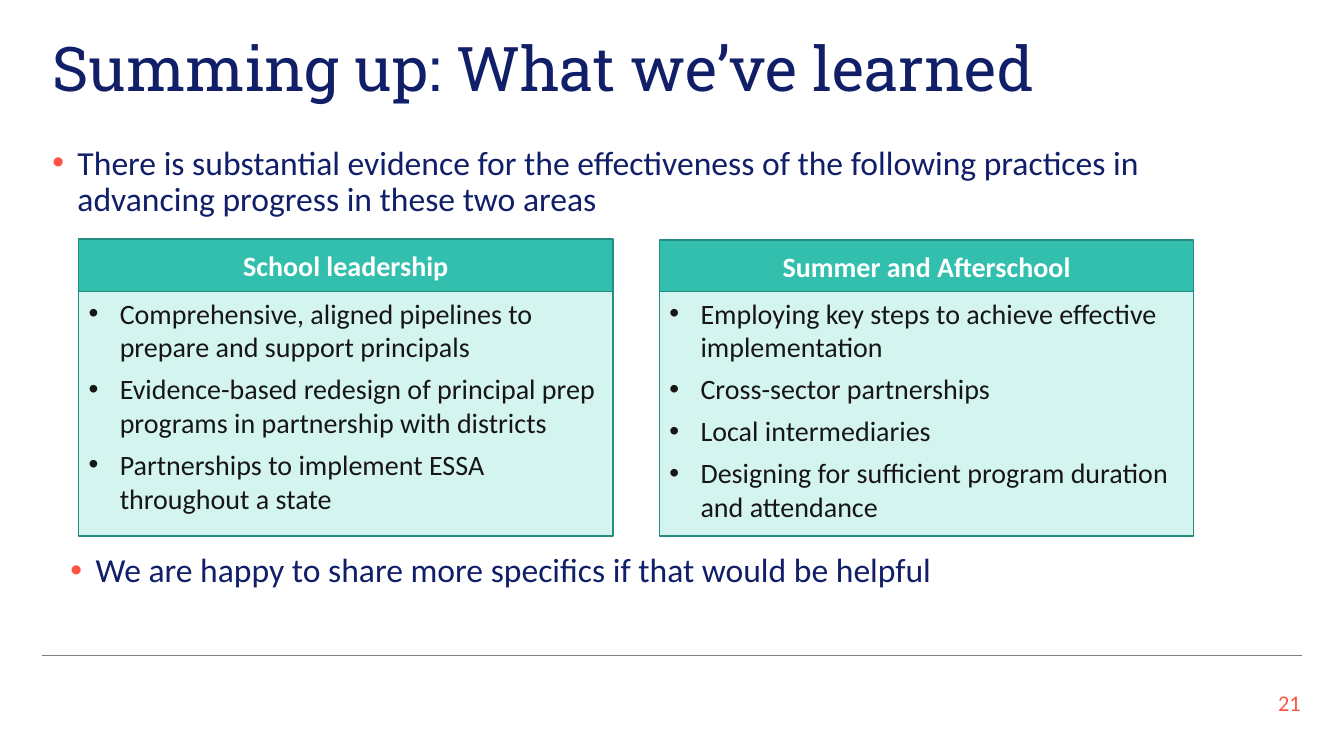
from lxml.etree import SubElement as Sub
from pptx import Presentation
from pptx.dml.color import RGBColor as Rgb
from pptx.enum.shapes import MSO_CONNECTOR as Conn, MSO_SHAPE as Kind
from pptx.enum.text import MSO_ANCHOR as Anchor, MSO_AUTO_SIZE as Fit, PP_ALIGN as Align
from pptx.oxml.ns import qn
from pptx.util import Inches, Pt

HUES = {
    "navy": "111F69", "coral": "FF5442", "teal": "32BFAD", "edge": "258D80",
    "mint": "D4F4F0", "ink": "161615", "white": "FFFFFF", "gray": "808080",
}
CARDS = [
    (0.78, 2.37, "School leadership", [
        "Comprehensive, aligned pipelines to prepare and support principals",
        "Evidence-based redesign of principal prep programs in partnership with districts",
        "Partnerships to implement ESSA throughout a state",
    ]),
    (6.54, 2.38, "Summer and Afterschool", [
        "Employing key steps to achieve effective implementation",
        "Cross-sector partnerships",
        "Local intermediaries",
        "Designing for sufficient program duration and attendance",
    ]),
]


def hue(name):
    return Rgb.from_string(HUES[name])


class Deck:
    def __init__(self):
        self.prs = Presentation()
        self.prs.slide_width = Inches(13.33)
        self.prs.slide_height = Inches(7.5)
        self.slide = self.prs.slides.add_slide(self.prs.slide_layouts[5])
        self.shapes = self.slide.shapes

    def bullet(self, para, indent, color):
        """Give a paragraph a hanging bullet; indent is in inches."""
        props = para._p.get_or_add_pPr()
        props.set("marL", str(Inches(indent)))
        props.set("indent", str(-Inches(indent)))
        Sub(Sub(props, qn("a:buClr")), qn("a:srgbClr")).set("val", HUES[color])
        Sub(props, qn("a:buFont")).set("typeface", "Arial")
        Sub(props, qn("a:buChar")).set("char", "•")

    def fill_text(self, shape, lines, size, color, font="Calibri", bold=False,
                  align=Align.LEFT, anchor=Anchor.TOP, space=None, dot=None):
        """Fill a shape with paragraphs; dot is a bullet's indent and colour."""
        frame = shape.text_frame
        frame.text = "\n".join(lines)
        frame.word_wrap = True
        frame.auto_size = Fit.NONE
        frame.vertical_anchor = anchor
        for i, para in enumerate(frame.paragraphs):
            if dot:
                self.bullet(para, *dot)
            para.alignment = align
            para.line_spacing = space
            if i:
                para.space_before = Pt(6)
            for run in para.runs:
                run.font.name = font
                run.font.size = Pt(size)
                run.font.bold = bold
                run.font.color.rgb = hue(color)

    def title(self, text, *box):
        shape = self.shapes.title
        shape.left, shape.top, shape.width, shape.height = map(Inches, box)
        self.fill_text(shape, [text], 44, "navy", font="Roboto Slab", space=0.9)

    def label(self, text, *box, **style):
        self.fill_text(self.shapes.add_textbox(*map(Inches, box)), [text], **style)

    def point(self, text, *box):
        self.label(text, *box, size=24, color="navy", space=0.9, dot=(0.25, "coral"))

    def panel(self, fill, lines, *box, **style):
        shape = self.shapes.add_shape(Kind.RECTANGLE, *map(Inches, box))
        shape.shadow.inherit = False
        shape.fill.solid()
        shape.fill.fore_color.rgb = hue(fill)
        shape.line.color.rgb = hue("edge")
        shape.line.width = Pt(1)
        self.fill_text(shape, lines, 20, **style)

    def card(self, left, top, head, items):
        self.panel("teal", [head], left, top, 5.3, 0.52, color="white", bold=True,
                   align=Align.CENTER, anchor=Anchor.MIDDLE)
        self.panel("mint", items, left, 2.89, 5.3, 2.43, color="ink", dot=(0.31, "ink"))

    def rule(self, *ends):
        line = self.shapes.add_connector(Conn.STRAIGHT, *map(Inches, ends))
        line.line.color.rgb = hue("gray")
        line.line.width = Pt(0.9)
        Sub(line._element.spPr, qn("a:effectLst"))


def main():
    deck = Deck()
    deck.rule(0.42, 6.5, 12.91, 6.5)
    deck.label("21", 10, 6.77, 3, 0.4, size=16, color="coral",
               align=Align.RIGHT, anchor=Anchor.MIDDLE)
    deck.title("Summing up: What we’ve learned", 0.42, 0.33, 12.49, 1)
    deck.point("There is substantial evidence for the effectiveness of the following "
               "practices in advancing progress in these two areas", 0.42, 1.4, 11.42, 0.91)
    for card in CARDS:
        deck.card(*card)
    deck.point("We are happy to share more specifics if that would be helpful",
               0.6, 5.44, 10.66, 0.91)
    deck.prs.save("out.pptx")


if __name__ == "__main__":
    main()
